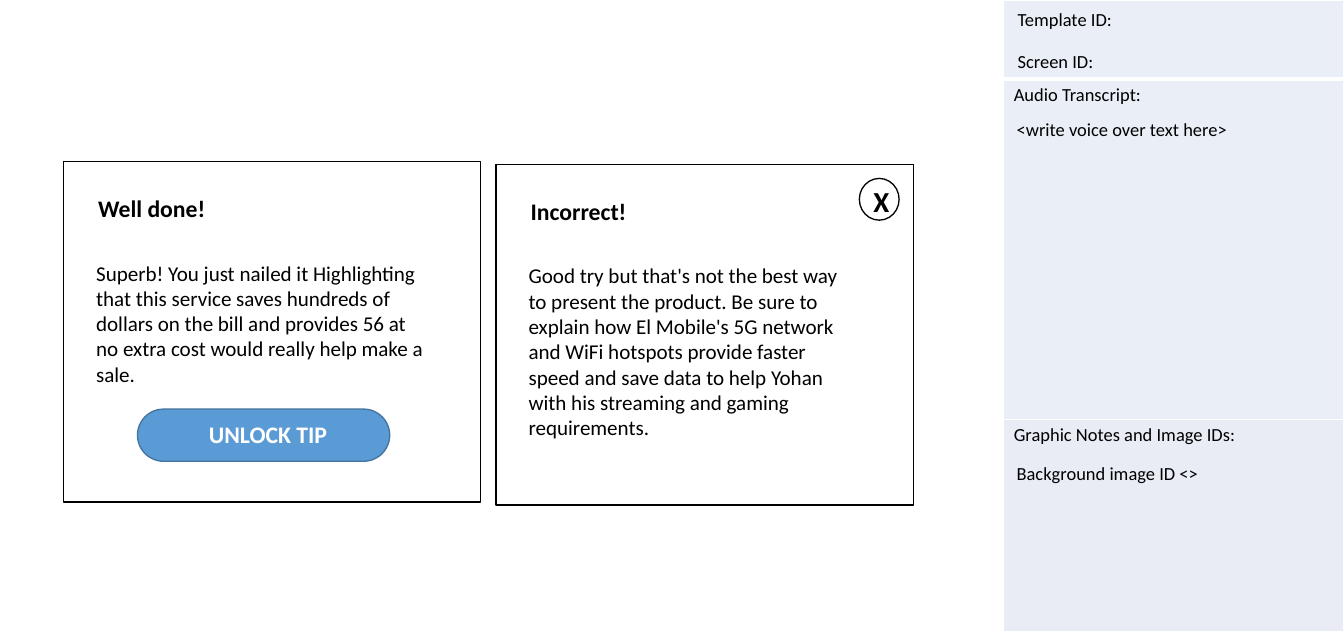
"""Storyboard slide with two feedback cards and a production notes column."""
from lxml import etree
from pptx import Presentation
from pptx import util as u
from pptx.dml.color import RGBColor
from pptx.enum import shapes, text
from pptx.oxml.ns import qn

COLORS = {
    "black": "000000", "white": "FFFFFF", "notes": "EAEFF7", "graphics": "E9EBF5",
    "button": "5B9BD5", "button_edge": "43739E",
}
CARD_WIDTH, CARD_HEIGHT = 31.05, 53.66
LINE_HEIGHT = 5.08

deck = Presentation()
deck.slide_width, deck.slide_height = u.Inches(14.17), u.Inches(6.69)
page = deck.slides.add_slide(deck.slide_layouts[6])
across, down = deck.slide_width / 100, deck.slide_height / 100


def add_panel(kind, left, top, width, height, fill="white", edge="black"):
    """Draw a filled outline; lengths are percentages of the slide."""
    panel = page.shapes.add_shape(
        kind, int(left * across), int(top * down), int(width * across), int(height * down))
    panel.shadow.inherit = False
    panel.fill.solid()
    panel.fill.fore_color.rgb = RGBColor.from_string(COLORS[fill])
    panel.line.color.rgb = RGBColor.from_string(COLORS[edge])
    panel.line.width = u.Pt(1)
    return panel


def add_label(words, left, top, width, height, size=14, bold=False, color="black",
              align=text.PP_ALIGN.LEFT, wrap=True):
    """Write one paragraph; lengths are percentages of the slide."""
    box = page.shapes.add_textbox(
        int(left * across), int(top * down), int(width * across), int(height * down))
    box.text_frame.word_wrap = wrap
    para = box.text_frame.paragraphs[0]
    para.text = words
    para.alignment = align
    para.font.name, para.font.size, para.font.bold = "Calibri", u.Pt(size), bold
    para.font.color.rgb = RGBColor.from_string(COLORS[color])


notes_rows = [
    ("", 12.41, "notes"),
    ("Audio Transcript:", 53.66, "notes"),
    ("Graphic Notes and Image IDs:", 33.33, "graphics"),
]
notes_height = sum(height for _, height, _ in notes_rows)
notes = page.shapes.add_table(
    len(notes_rows), 1, int(74.66 * across), 0,
    int(25.34 * across), int(notes_height * down)).table
notes.first_row = notes.horz_banding = False
for index, (heading, height, fill) in enumerate(notes_rows):
    notes.rows[index].height = int(height * down)
    cell = notes.cell(index, 0)
    cell.margin_left = cell.margin_right = u.Inches(0.11)
    properties = cell._tc.get_or_add_tcPr()
    for side in ("lnL", "lnR", "lnT", "lnB"):
        thick = (index, side) in ((0, "lnB"), (1, "lnT"))
        border = etree.SubElement(properties, qn(f"a:{side}"), w=str(u.Pt(3 if thick else 1)))
        paint = etree.SubElement(border, qn("a:solidFill"))
        etree.SubElement(paint, qn("a:srgbClr"), val=COLORS["white"])
    cell.fill.solid()
    cell.fill.fore_color.rgb = RGBColor.from_string(COLORS[fill])
    para = cell.text_frame.paragraphs[0]
    para.text = heading
    para.font.name, para.font.size = "Calibri", u.Pt(14)
    para.font.color.rgb = RGBColor.from_string(COLORS["black"])

for words, left, top in [
    ("Screen ID:", 75.02, 7.17),
    ("Template ID:", 75.02, 0.6),
    ("<write voice over text here>", 74.95, 17.79),
    ("Background image ID <>", 74.95, 72.05),
]:
    add_label(words, left, top, 100 - left, LINE_HEIGHT)

for title, body, left, top, body_width, body_height in [
    ("Well done!",
     "Superb! You just nailed it Highlighting that this service saves hundreds of dollars "
     "on the bill and provides 56 at no extra cost would really help make a sale.",
     4.73, 25.41, 26.18, 21.08),
    ("Incorrect!",
     "Good try but that's not the best way to present the product. Be sure to explain how "
     "El Mobile's 5G network and WiFi hotspots provide faster speed and save data to help "
     "Yohan with his streaming and gaming requirements.",
     36.91, 25.86, 25.69, 29.75),
]:
    add_panel(shapes.MSO_SHAPE.RECTANGLE, left, top, CARD_WIDTH, CARD_HEIGHT)
    add_label(body, left + 1.73, top + 14.8, body_width, body_height, size=16)
    add_label(title, left + 1.87, top + 4.41, 23.92, 5.98, size=18, bold=True)

button = add_panel(shapes.MSO_SHAPE.ROUNDED_RECTANGLE, 10.23, 64.42, 18.77, 8.22,
                   "button", "button_edge")
button.adjustments[0] = 0.5
add_label("UNLOCK TIP", 14.47, 65.32, 10.94, 7.17, size=18, bold=True, color="white",
          align=text.PP_ALIGN.CENTER)

add_panel(shapes.MSO_SHAPE.OVAL, 63.94, 28.1, 2.96, 6.58)
add_label("X", 64.29, 28.1, 2.33, 6.58, size=22, bold=True,
          align=text.PP_ALIGN.CENTER, wrap=False)

deck.save("out.pptx")
